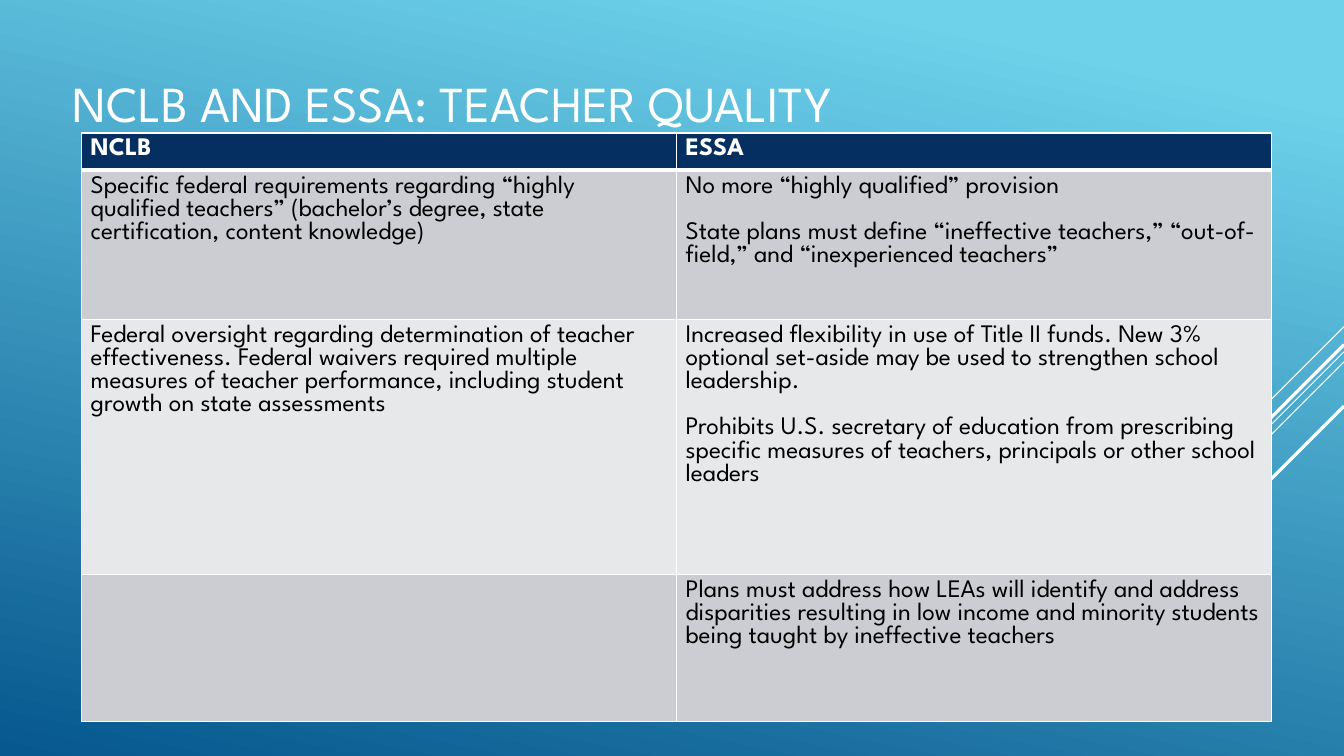
from pptx import Presentation
from pptx.dml.color import RGBColor
from pptx.enum.shapes import MSO_CONNECTOR
from pptx.enum.text import MSO_ANCHOR, MSO_AUTO_SIZE, PP_ALIGN
from pptx.oxml.ns import qn
from pptx.util import Inches, Pt
from lxml.etree import SubElement

# Content: each cell is a list of paragraphs
TITLE = "NCLB AND ESSA: TEACHER QUALITY"
ROWS = [
    (["NCLB"], ["ESSA"]),
    (["Specific federal requirements regarding “highly qualified teachers” "
      "(bachelor’s degree, state certification, content knowledge)"],
     ["No more “highly qualified” provision",
      "State plans must define “ineffective teachers,” “out-of-field,” "
      "and “inexperienced teachers”"]),
    (["Federal oversight regarding determination of teacher effectiveness. "
      "Federal waivers required multiple measures of teacher performance, "
      "including student growth on state assessments"],
     ["Increased flexibility in use of Title II funds. New 3% optional "
      "set-aside may be used to strengthen school leadership.",
      "Prohibits U.S. secretary of education from prescribing specific "
      "measures of teachers, principals or other school leaders"]),
    ([],
     ["Plans must address how LEAs will identify and address disparities "
      "resulting in low income and minority students being taught by "
      "ineffective teachers"]),
]
HEIGHTS = [0.37, 1.48, 2.53, 1.46]
# Diagonal rays: top at the right edge, run to the left, weight
RAYS = [(3.24, 1.0, 0.75), (3.49, 3.26, 0.75), (3.59, 2.07, 0.75),
        (3.42, 1.91, 2.25), (4.03, 1.39, 2.25)]


class Theme:
    font = "League Spartan"
    white, black = "FFFFFF", "000000"
    head, bands = "052F61", ("E7E8EA", "CCCDD2")
    sky = ((0.1, "6ED2EB"), (1.0, "06588E"))
    title, body, gap = 36, 18, 16.5
    edge, rule = 1, 3


WIDE, HIGH = 13.33, 7.5


def color(code):
    return RGBColor.from_string(code)


def style(part, size, code, bold=False):
    look = {"name": Theme.font, "size": Pt(size), "bold": bold}
    for key, value in look.items():
        setattr(part.font, key, value)
    part.font.color.rgb = color(code)


def border(cell, side, width):
    line = SubElement(cell._tc.get_or_add_tcPr(), qn("a:" + side), w=str(Pt(width)))
    fill = SubElement(line, qn("a:solidFill"))
    SubElement(fill, qn("a:srgbClr"), val=Theme.white)


def fill_cell(cell, texts, row):
    top = row == 0
    # Borders come before the fill in the cell's XML
    for side in ("lnL", "lnR", "lnT", "lnB"):
        thick = (top and side == "lnB") or (row == 1 and side == "lnT")
        border(cell, side, Theme.rule if thick else Theme.edge)
    cell.fill.solid()
    cell.fill.fore_color.rgb = color(Theme.head if top else Theme.bands[row % 2])
    box = {"margin_left": 0.09, "margin_right": 0.09,
           "margin_top": 0.05, "margin_bottom": 0.05}
    for key, value in box.items():
        setattr(cell, key, Inches(value))
    frame = cell.text_frame
    frame.text = "\n".join(texts)
    for i, para in enumerate(frame.paragraphs):
        style(para, Theme.body, Theme.white if top else Theme.black, top)
        if i:
            para.space_before = Pt(Theme.gap)


def main():
    deck = Presentation()
    deck.slide_width, deck.slide_height = Inches(WIDE), Inches(HIGH)
    slide = deck.slides.add_slide(deck.slide_layouts[5])

    # Background gradient
    back = slide.background.fill
    back.gradient()
    back.gradient_angle = 258
    for stop, (place, code) in zip(back.gradient_stops, Theme.sky):
        stop.position = place
        stop.color.rgb = color(code)

    # Diagonal rays
    for y, run, width in RAYS:
        ray = slide.shapes.add_connector(
            MSO_CONNECTOR.STRAIGHT, Inches(WIDE), Inches(y),
            Inches(WIDE - run), Inches(y + run))
        ray.line.color.rgb = color(Theme.white)
        ray.line.width = Pt(width)
        SubElement(ray._element.spPr, qn("a:effectLst"))

    # Title
    title = slide.shapes.title
    place = {"left": 0.62, "top": 0.53, "width": 9.33, "height": 1.65}
    for key, value in place.items():
        setattr(title, key, Inches(value))
    frame = title.text_frame
    frame.text = TITLE
    look = {"vertical_anchor": MSO_ANCHOR.TOP, "margin_top": Inches(0.19),
            "word_wrap": True, "auto_size": MSO_AUTO_SIZE.NONE}
    for key, value in look.items():
        setattr(frame, key, value)
    para = frame.paragraphs[0]
    para.alignment = PP_ALIGN.LEFT
    style(para.runs[0], Theme.title, Theme.white)

    # Comparison table
    table = slide.shapes.add_table(
        len(ROWS), 2, Inches(0.81), Inches(1.32),
        Inches(11.8), Inches(sum(HEIGHTS))).table
    for row, high in zip(table.rows, HEIGHTS):
        row.height = Inches(high)
    for r, texts in enumerate(ROWS):
        for c, text in enumerate(texts):
            fill_cell(table.cell(r, c), text, r)

    deck.save("out.pptx")


if __name__ == "__main__":
    main()
